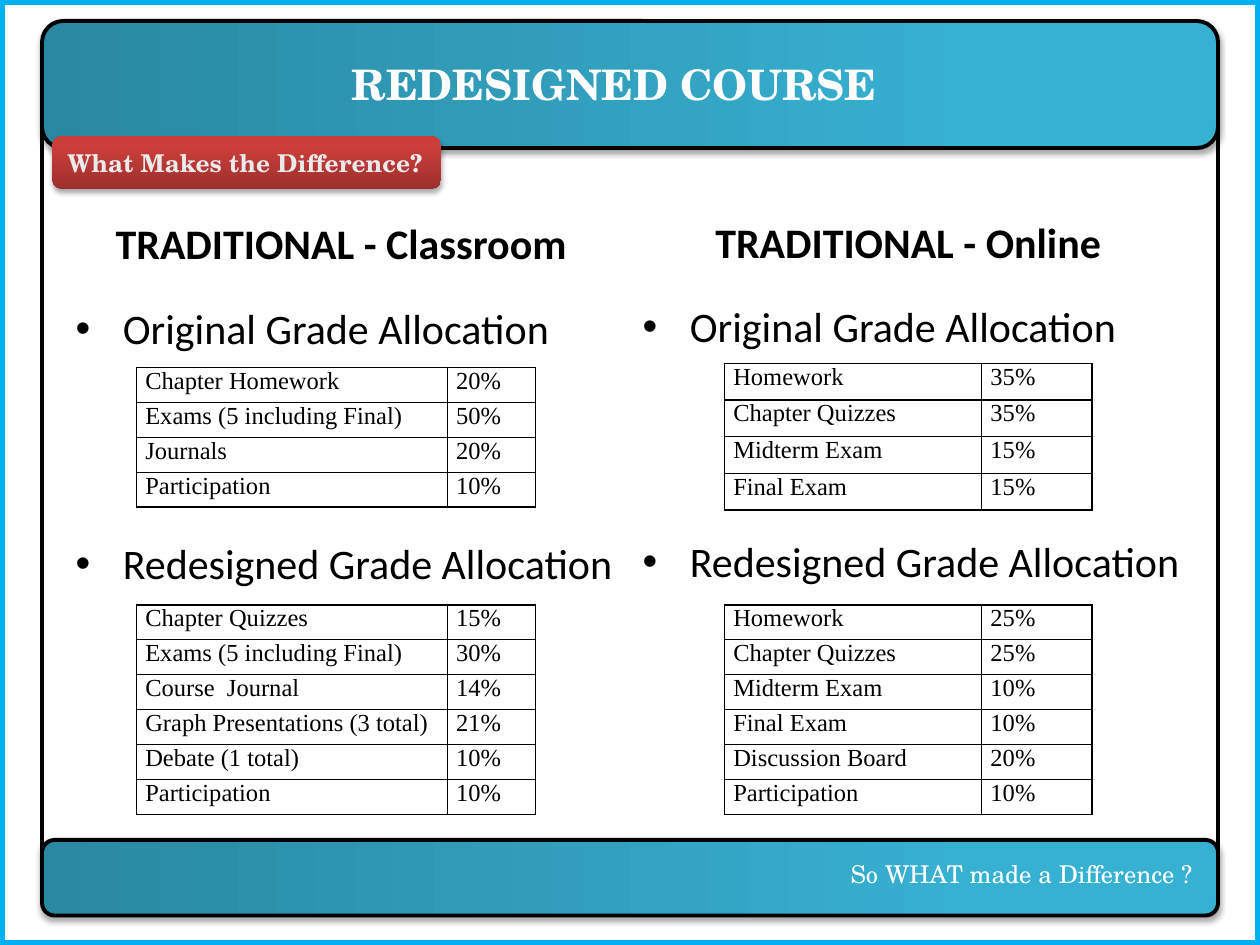
"""Build a slide comparing original and redesigned grade allocations."""
from dataclasses import dataclass
from typing import Optional

from lxml import etree
from pptx import Presentation, util as u
from pptx.dml.color import RGBColor
from pptx.enum import shapes, text
from pptx.oxml import ns


@dataclass(frozen=True)
class Theme:
    """Colours, fonts and type sizes."""
    white: str = "FFFFFF"
    black: str = "000000"
    edge: str = "00B0F0"
    pale: str = "EAEAEA"
    teal: tuple = ("2A88A2", "37B1D2")
    red: tuple = ("9C2F2D", "CB3E3A")
    display: str = "TeX Gyre Schola"
    body: str = "Calibri"
    table: str = "Times New Roman"
    large: int = 24
    small: int = 14


@dataclass(frozen=True)
class Box:
    """A rectangle in cells of a grid of 120 columns by 90 rows."""
    x: float
    y: float
    w: float
    h: float

    def emu(self) -> list:
        """Return left, top, width and height as lengths."""
        return [cells(n) for n in (self.x, self.y, self.w, self.h)]


@dataclass(frozen=True)
class Grades:
    """A table of graded items and their weights."""
    x: float
    y: float
    cols: tuple
    row: float
    items: tuple


@dataclass(frozen=True)
class Column:
    """One side of the comparison."""
    heading: str
    head_box: Box
    list_box: Box
    tables: tuple


T = Theme()
TOPICS = ("Original Grade Allocation", "Redesigned Grade Allocation")
TOPIC_GAP = 105.6
CLASS_COLS, ONLINE_COLS = (29.6, 8.4), (24.5, 10.5)
COLUMNS = (
    Column("TRADITIONAL - Classroom", Box(6, 20.1, 53, 8.4), Box(6, 28.2, 57, 51.8), (
        Grades(13, 35, CLASS_COLS, 3.33, (
            ("Chapter Homework", "20%"), ("Exams (5 including Final)", "50%"),
            ("Journals", "20%"), ("Participation", "10%"))),
        Grades(13, 57.6, CLASS_COLS, 3.33, (
            ("Chapter Quizzes", "15%"), ("Exams (5 including Final)", "30%"),
            ("Course  Journal", "14%"), ("Graph Presentations (3 total)", "21%"),
            ("Debate (1 total)", "10%"), ("Participation", "10%"))))),
    Column("TRADITIONAL - Online", Box(60, 20, 53, 8.4), Box(60, 28, 55, 51.8), (
        Grades(69, 34.6, ONLINE_COLS, 3.5, (
            ("Homework", "35%"), ("Chapter Quizzes", "35%"),
            ("Midterm Exam", "15%"), ("Final Exam", "15%"))),
        Grades(69, 57.6, ONLINE_COLS, 3.33, (
            ("Homework", "25%"), ("Chapter Quizzes", "25%"), ("Midterm Exam", "10%"),
            ("Final Exam", "10%"), ("Discussion Board", "20%"), ("Participation", "10%"))))),
)


def cells(n: float) -> int:
    """Convert grid cells to a length."""
    return u.Inches(n / 12)


def rgb(color: str) -> RGBColor:
    """Convert a hex string to a colour."""
    return RGBColor.from_string(color)


def add_run(p, words: str, font: str, size: int, color: str, bold: bool = False) -> None:
    """Add one formatted run to a paragraph."""
    r = p.add_run()
    r.text = words
    r.font.name, r.font.size, r.font.bold = font, u.Pt(size), bold
    r.font.color.rgb = rgb(color)


def set_frame(tf, anchor) -> None:
    """Wrap the text, fix its size and anchor it."""
    tf.word_wrap = True
    tf.auto_size = text.MSO_AUTO_SIZE.NONE
    tf.vertical_anchor = anchor


def add_shadow(sp) -> None:
    """Give a shape a soft shadow below it."""
    effects = sp._element.spPr.find(ns.qn("a:effectLst"))
    shadow = etree.SubElement(effects, ns.qn("a:outerShdw"), blurRad="39370", dist="22860",
                              dir="5400000", rotWithShape="0")
    color = etree.SubElement(shadow, ns.qn("a:srgbClr"), val=T.black)
    etree.SubElement(color, ns.qn("a:alpha"), val="35000")


def add_panel(s, kind, box: Box, line: Optional[str] = None, width: float = 2.25,
              blend: Optional[tuple] = None, angle: int = 0):
    """Add a white panel, or a shadowed one with a colour blend."""
    sp = s.shapes.add_shape(kind, *box.emu())
    sp.shadow.inherit = False
    if blend:
        sp.fill.gradient()
        sp.fill.gradient_angle = angle
        for stop, color, position in zip(sp.fill.gradient_stops, blend, (0, 0.8)):
            stop.color.rgb, stop.position = rgb(color), position
        add_shadow(sp)
    else:
        sp.fill.solid()
        sp.fill.fore_color.rgb = rgb(T.white)
    if line:
        sp.line.color.rgb, sp.line.width = rgb(line), u.Pt(width)
    else:
        sp.line.fill.background()
    return sp


def place(sp, box: Box, anchor):
    """Move a placeholder to a box in front and return its text frame."""
    sp.element.getparent().append(sp.element)
    sp.left, sp.top, sp.width, sp.height = box.emu()
    set_frame(sp.text_frame, anchor)
    return sp.text_frame


def add_grades(s, grades: Grades) -> None:
    """Add a ruled table of grades."""
    count = len(grades.items)
    box = Box(grades.x, grades.y, sum(grades.cols), grades.row * count)
    table = s.shapes.add_table(count, 2, *box.emu()).table
    table.first_row = table.horz_banding = False
    for col, width in zip(table.columns, grades.cols):
        col.width = cells(width)
    for row, item in zip(table.rows, grades.items):
        row.height = cells(grades.row)
        for cell, words in zip(row.cells, item):
            cell.margin_left = cell.margin_right = u.Inches(0.07)
            cell.margin_top = cell.margin_bottom = 0
            for side in ("lnL", "lnR", "lnT", "lnB"):
                ln = etree.SubElement(cell._tc.tcPr, ns.qn(f"a:{side}"), w="12700")
                fill = etree.SubElement(ln, ns.qn("a:solidFill"))
                etree.SubElement(fill, ns.qn("a:srgbClr"), val=T.black)
            cell.fill.background()
            add_run(cell.text_frame.paragraphs[0], words, T.table, T.small, T.black)


def add_column(s, column: Column, head, body) -> None:
    """Fill one side with its heading, topics and tables."""
    p = place(head, column.head_box, text.MSO_ANCHOR.TOP).paragraphs[0]
    p.alignment, p.space_before = text.PP_ALIGN.CENTER, 0
    add_run(p, column.heading, T.body, T.large, T.black, True)
    tf = place(body, column.list_box, text.MSO_ANCHOR.TOP)
    for i, topic in enumerate(TOPICS):
        p = tf.add_paragraph() if i else tf.paragraphs[0]
        p.space_before = u.Pt(TOPIC_GAP * i)
        add_run(p, topic, T.body, T.large, T.black)
    for grades in column.tables:
        add_grades(s, grades)


def main() -> None:
    """Build and save the slide."""
    prs = Presentation()
    prs.slide_width, prs.slide_height = cells(120), cells(90)
    s = prs.slides.add_slide(prs.slide_layouts[4])
    title, *sides = list(s.placeholders)
    kind, middle = shapes.MSO_SHAPE, text.MSO_ANCHOR.MIDDLE
    rounded = kind.FLOWCHART_ALTERNATE_PROCESS

    add_panel(s, kind.RECTANGLE, Box(0, 0, 120, 90), T.edge, 6)
    add_panel(s, kind.FLOWCHART_PROCESS, Box(4, 6, 112, 76), T.black)
    for bar in (Box(4, 2, 112, 12.1), Box(4, 80, 112, 7.2)):
        add_panel(s, rounded, bar, T.black, blend=T.teal)

    p = place(title, Box(21, 5, 75, 6), middle).paragraphs[0]
    p.alignment = text.PP_ALIGN.CENTER
    add_run(p, "REDESIGNED COURSE", T.display, T.large, T.white, True)

    tf = s.shapes.add_textbox(*Box(7, 81.5, 109, 3.5).emu()).text_frame
    set_frame(tf, middle)
    tf.margin_right = cells(2.4)
    tf.paragraphs[0].alignment = text.PP_ALIGN.RIGHT
    add_run(tf.paragraphs[0], "So WHAT made a Difference ?", T.display, T.small, T.white)

    tf = add_panel(s, rounded, Box(5, 13, 37, 5), blend=T.red, angle=90).text_frame
    set_frame(tf, middle)
    tf.paragraphs[0].alignment = text.PP_ALIGN.LEFT
    add_run(tf.paragraphs[0], "What Makes the Difference?", T.display, T.small, T.pale, True)

    for column, head, body in zip(COLUMNS, sides[::2], sides[1::2]):
        add_column(s, column, head, body)
    prs.save("out.pptx")


if __name__ == "__main__":
    main()
